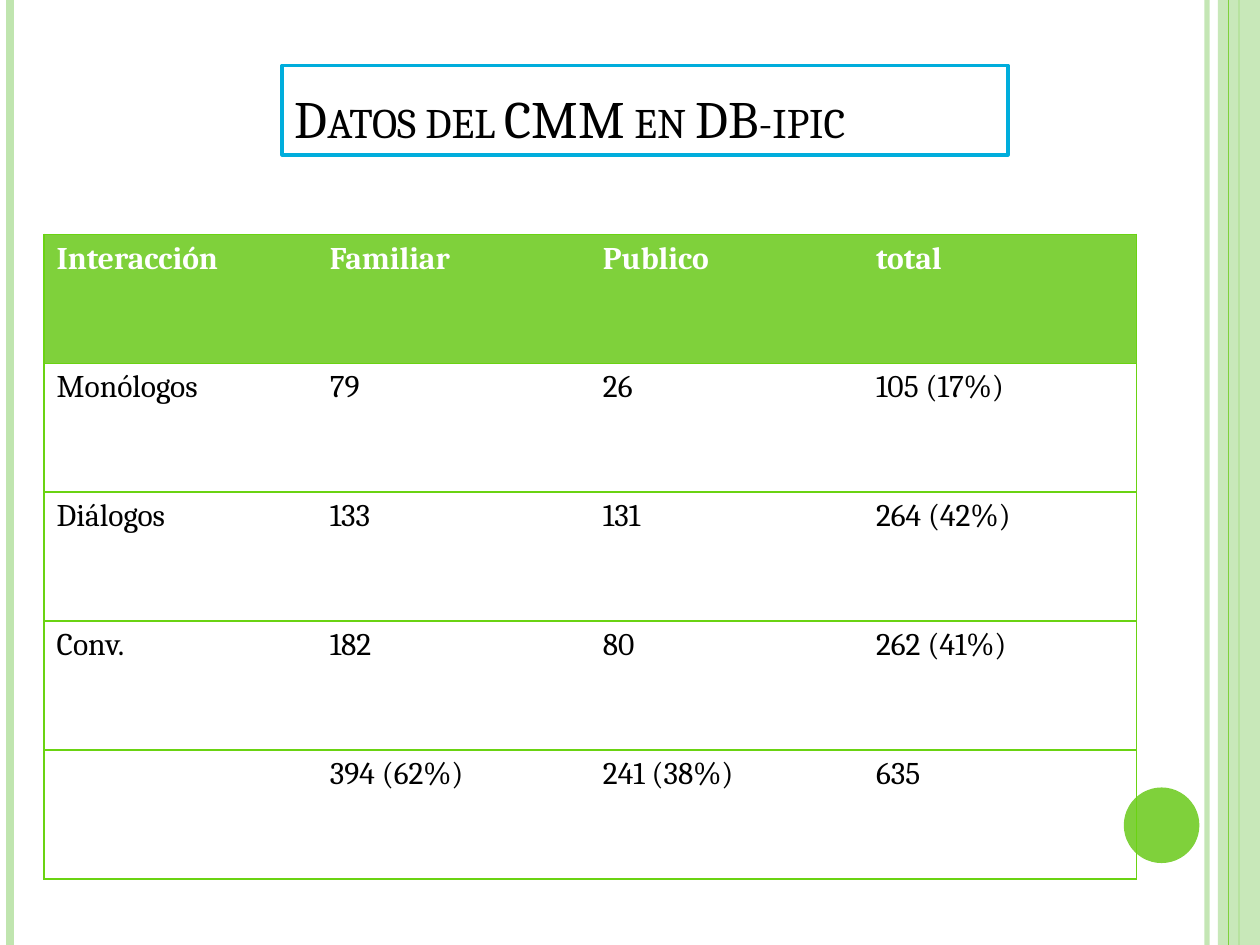
from lxml import etree
from pptx import Presentation
from pptx.dml.color import RGBColor
from pptx.enum.shapes import MSO_CONNECTOR, MSO_SHAPE
from pptx.enum.text import MSO_ANCHOR, PP_ALIGN
from pptx.oxml import parse_xml
from pptx.oxml.ns import nsdecls, qn
from pptx.util import Pt

LINE = MSO_CONNECTOR.STRAIGHT
RECT, OVAL = MSO_SHAPE.RECTANGLE, MSO_SHAPE.OVAL
BOTTOM, LEFT = MSO_ANCHOR.BOTTOM, PP_ALIGN.LEFT

WHITE = RGBColor(0xFF, 0xFF, 0xFF)
BLACK = RGBColor(0, 0, 0)
GREEN = RGBColor(0x7F, 0xD1, 0x3B)
PALE = RGBColor(0xC0, 0xE5, 0xAF)
BORDER = RGBColor(0x6A, 0xD3, 0x12)
BLUE = RGBColor(0x00, 0xAD, 0xDC)

FONT = "Cambria"
PLAIN_TABLE = "{2D5ABB26-0587-4C30-8999-92F81FD0307C}"
WIDTH, HEIGHT = 720, 540

TITLE = "Datos del CMM en DB-ipic"
ROWS = [
    ("Interacción", "Familiar", "Publico", "total"),
    ("Monólogos", "79", "26", "105 (17%)"),
    ("Diálogos", "133", "131", "264 (42%)"),
    ("Conv.", "182", "80", "262 (41%)"),
    ("", "394 (62%)", "241 (38%)", "635"),
]
TABLE_LEFT, TABLE_TOP = 25.2, 133.9
COL_WIDTH, ROW_HEIGHT = 156.1, 73.7


def set_alpha(color_format_parent, percent):
    color = color_format_parent.find(".//" + qn("a:srgbClr"))
    etree.SubElement(color, qn("a:alpha")).set("val", str(percent * 1000))


def add_stripe(slide, x, color, weight, alpha=None):
    s = slide.shapes.add_connector(LINE, Pt(x), Pt(0), Pt(x), Pt(HEIGHT))
    s.line.color.rgb = color
    s.line.width = Pt(weight)
    sp_pr = s._element.spPr
    if alpha:
        set_alpha(sp_pr, alpha)
    etree.SubElement(sp_pr, qn("a:effectLst"))


def add_box(slide, kind, box, fill, line=None):
    s = slide.shapes.add_shape(kind, *[Pt(v) for v in box])
    s.shadow.inherit = False
    s.fill.solid()
    s.fill.fore_color.rgb = fill
    if line:
        s.line.color.rgb = line
        s.line.width = Pt(2)
    else:
        s.line.fill.background()
    return s


def format_run(r, size, color, bold=False):
    r.font.name = FONT
    r.font.size = Pt(size)
    r.font.color.rgb = color
    r.font.bold = bold


def set_borders(cell, sides):
    tc_pr = cell._tc.get_or_add_tcPr()
    for i, side in enumerate(sides):
        tc_pr.insert(i, parse_xml(
            f'<a:{side} {nsdecls("a")} w="12700"><a:solidFill>'
            f'<a:srgbClr val="{BORDER}"/></a:solidFill></a:{side}>'))


def add_title(slide):
    s = add_box(slide, RECT, (161.3, 37.4, 414.7, 51.1), WHITE, BLUE)
    tf = s.text_frame
    tf.word_wrap = True
    tf.vertical_anchor = BOTTOM
    tf.text = TITLE
    p = tf.paragraphs[0]
    p.alignment = LEFT
    r = p.runs[0]
    format_run(r, 30, BLACK)
    r.font._element.set("cap", "small")


def add_data_table(slide):
    n_rows, n_cols = len(ROWS), len(ROWS[0])
    frame = slide.shapes.add_table(
        n_rows, n_cols, Pt(TABLE_LEFT), Pt(TABLE_TOP),
        Pt(COL_WIDTH * n_cols), Pt(ROW_HEIGHT * n_rows))
    table = frame.table
    table._tbl.tblPr.find(qn("a:tableStyleId")).text = PLAIN_TABLE
    table.horz_banding = False
    for col in table.columns:
        col.width = Pt(COL_WIDTH)
    for i, values in enumerate(ROWS):
        table.rows[i].height = Pt(ROW_HEIGHT)
        header = i == 0
        for j, value in enumerate(values):
            cell = table.cell(i, j)
            if header:
                cell.fill.solid()
                cell.fill.fore_color.rgb = GREEN
            else:
                cell.fill.background()
            cell.text = value
            for r in cell.text_frame.paragraphs[0].runs:
                format_run(r, 18, WHITE if header else BLACK, header)
            left = ["lnL"] if j == 0 else []
            right = ["lnR"] if j == n_cols - 1 else []
            set_borders(cell, left + right + ["lnT", "lnB"])


def main():
    prs = Presentation()
    prs.slide_width, prs.slide_height = Pt(WIDTH), Pt(HEIGHT)
    slide = prs.slides.add_slide(prs.slide_layouts[6])

    add_stripe(slide, 689.8, PALE, 3, 93)
    add_stripe(slide, 5.9, PALE, 4.5)
    add_stripe(slide, 708, GREEN, 1.5)
    band = add_box(slide, RECT, (696, 0, 24, HEIGHT), PALE)
    set_alpha(band._element.spPr, 87)
    add_stripe(slide, 702, GREEN, 0.75)
    add_box(slide, OVAL, (642.2, 450, 43.2, 43.2), GREEN)
    add_title(slide)
    add_data_table(slide)
    prs.save("out.pptx")


if __name__ == "__main__":
    main()
